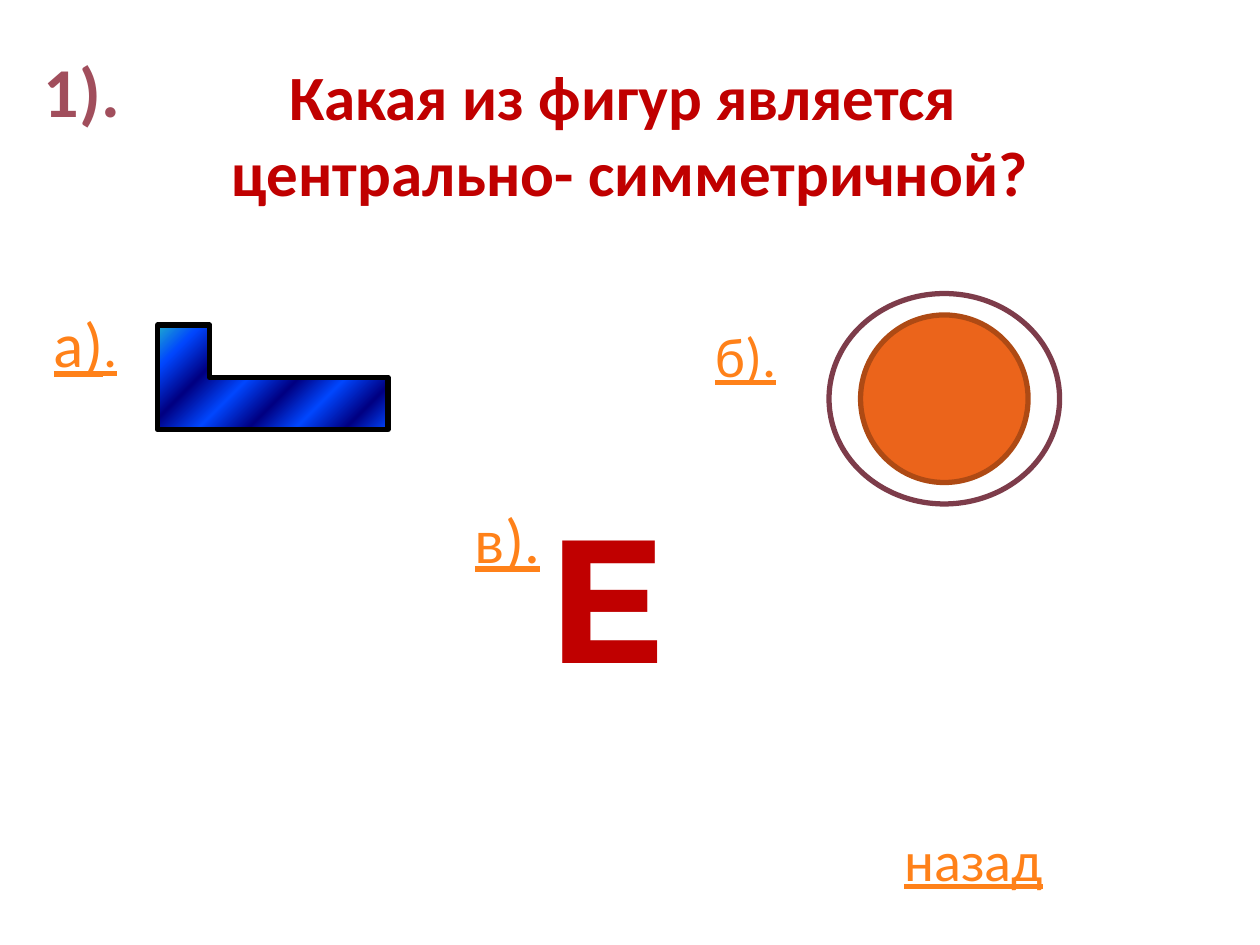
from lxml.etree import SubElement
from pptx import Presentation
from pptx.dml.color import RGBColor as RGB
from pptx.enum.shapes import MSO_SHAPE as Geo
from pptx.enum.text import PP_ALIGN as Align
from pptx.oxml.ns import qn
from pptx.util import Inches, Pt

HEX = {
    "red": "C00000", "link": "FF8119", "rose": "A14E5C",
    "white": "FFFFFF", "black": "000000", "plum": "7D3C4A",
    "orange": "EB641B", "rust": "AE4A14",
    "cyan": "1FAECD", "blue": "0047FF", "navy": "000082",
}
# Gradient stops: percent and colour
STOPS = [(0, "cyan"), (13, "blue"), (28, "navy"), (43, "blue"),
         (58, "navy"), (72, "blue"), (87, "navy"), (100, "blue")]


def color(name):
    return RGB.from_string(HEX[name])


def add_text(slide, box, text, size, hue, face="Calibri", bold=False,
             line=False, align=Align.LEFT):
    area = slide.shapes.add_textbox(*map(Inches, box))
    area.text_frame.word_wrap = True
    par = area.text_frame.paragraphs[0]
    par.text = text
    par.alignment = align
    font = par.font
    font.name, font.size = face, Pt(size)
    font.bold, font.underline = bold, line
    font.color.rgb = color(hue)
    return par


def add_link(slide, box, text, size):
    return add_text(slide, box, text, size, "link", line=True)


def add_figure(slide, kind, box, edge, fill=None):
    fig = slide.shapes.add_shape(kind, *map(Inches, box))
    fig.shadow.inherit = False
    fig.line.color.rgb = color(edge)
    fig.line.width = Pt(3)
    if fill:
        fig.fill.solid()
        fig.fill.fore_color.rgb = color(fill)
    return fig


def set_blend(fig, stops, angle):
    fig.fill.gradient()
    fig.fill.gradient_angle = angle
    group = fig._element.spPr.find(qn("a:gradFill")).find(qn("a:gsLst"))
    for old in list(group):
        group.remove(old)
    for pos, name in stops:
        stop = SubElement(group, qn("a:gs"), pos=str(pos * 1000))
        SubElement(stop, qn("a:srgbClr"), val=HEX[name])


def main():
    prs = Presentation()
    prs.slide_width, prs.slide_height = Inches(10), Inches(7.5)
    slide = prs.slides.add_slide(prs.slide_layouts[6])

    # Question
    add_text(slide, (0.25, 0.41, 9.5, 1.42),
             "Какая из фигур является \vцентрально- симметричной?",
             36, "red", bold=True, align=Align.CENTER)
    add_text(slide, (0.25, 0.33, 1, 0.77), "1).", 40, "rose", bold=True)

    # Answer a: corner
    par = add_link(slide, (0.33, 2.37, 0.9, 0.71), "а)", 36)
    dot = par.add_run()
    dot.text = "."
    dot.font.size = Pt(32)
    corner = add_figure(slide, Geo.CORNER, (1.25, 2.58, 1.83, 0.83), "black")
    set_blend(corner, STOPS, 315)

    # Answer b: circle in an oval
    add_figure(slide, Geo.OVAL, (6.58, 2.33, 1.83, 1.67), "plum", "white")
    add_figure(slide, Geo.OVAL, (6.83, 2.5, 1.33, 1.33), "rust", "orange")
    add_link(slide, (5.58, 2.5, 0.75, 0.64), "б).", 32)

    # Answer c: letter
    add_text(slide, (4.25, 3.83, 1.67, 1.78), "Е", 100, "red",
             face="Montserrat", bold=True)
    add_link(slide, (3.67, 3.92, 0.75, 0.71), "в).", 36)

    # Way back
    add_link(slide, (7.08, 6.5, 2, 0.64), "назад", 32)

    prs.save("out.pptx")


if __name__ == "__main__":
    main()
